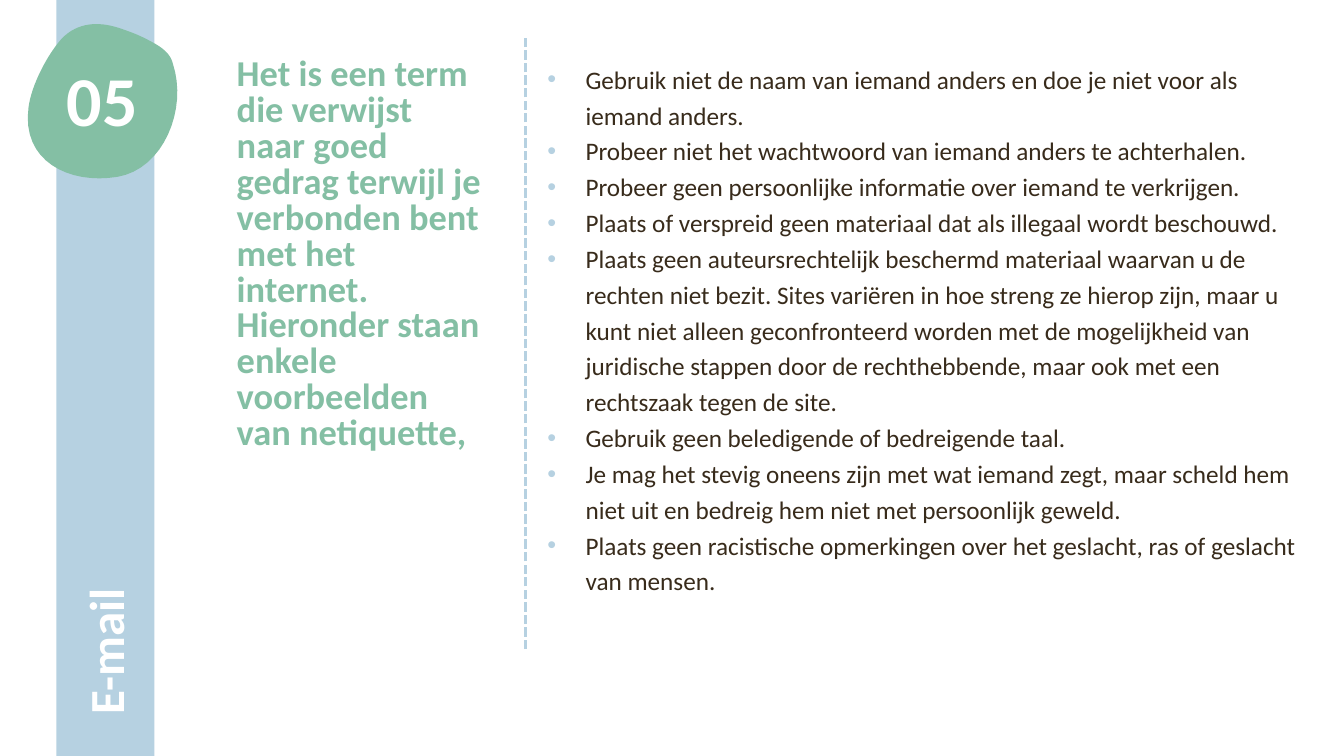
from lxml.etree import SubElement
from pptx import Presentation
from pptx.dml.color import RGBColor
from pptx.enum.shapes import MSO_CONNECTOR, MSO_SHAPE
from pptx.enum.text import MSO_ANCHOR, PP_ALIGN
from pptx.oxml.ns import qn
from pptx.util import Inches, Pt

WIDE, HIGH = 13.33, 7.5
HUES = {"blue": "B6D1E1", "green": "84BFA4", "white": "FFFFFF", "brown": "382B1B"}
INTRO = ("Het is een term die verwijst naar goed gedrag terwijl je verbonden bent met het "
         "internet. Hieronder staan enkele voorbeelden van netiquette,")
RULES = [
    "Gebruik niet de naam van iemand anders en doe je niet voor als iemand anders.",
    "Probeer niet het wachtwoord van iemand anders te achterhalen.",
    "Probeer geen persoonlijke informatie over iemand te verkrijgen.",
    "Plaats of verspreid geen materiaal dat als illegaal wordt beschouwd.",
    "Plaats geen auteursrechtelijk beschermd materiaal waarvan u de rechten niet bezit. "
    "Sites variëren in hoe streng ze hierop zijn, maar u kunt niet alleen geconfronteerd "
    "worden met de mogelijkheid van juridische stappen door de rechthebbende, maar ook met "
    "een rechtszaak tegen de site.",
    "Gebruik geen beledigende of bedreigende taal.",
    "Je mag het stevig oneens zijn met wat iemand zegt, maar scheld hem niet uit en bedreig "
    "hem niet met persoonlijk geweld.",
    "Plaats geen racistische opmerkingen over het geslacht, ras of geslacht van mensen.",
]
START = (61, 3)
CURVES = [
    ((48, -1), (34, -1), (23, 10)),
    ((13, 21), (3, 40), (1, 54)),
    ((-4, 89), (28, 104), (60, 99)),
    ((91, 94), (107, 55), (97, 26)),
    ((95, 18), (87, 14), (79, 10)),
    ((73, 7), (67, 5), START),
]


def part(box, left, top, wide, high):
    """Return a box given in percent of another box."""
    x, y, w, h = box
    return x + w * left / 100, y + h * top / 100, w * wide / 100, h * high / 100


def hue(name):
    """Return a named colour."""
    return RGBColor.from_string(HUES[name])


def paint(shape, name):
    """Give a shape a flat fill without line or shadow."""
    shape.shadow.inherit = False
    shape.fill.solid()
    shape.fill.fore_color.rgb = hue(name)
    shape.line.fill.background()


def write(slide, box, lines, size, color, bold=False, space=None, align=PP_ALIGN.LEFT,
          anchor=MSO_ANCHOR.TOP, turn=0, left=0, hang=0, dot=None):
    """Add a text box with one paragraph for each line."""
    shape = slide.shapes.add_textbox(*map(Inches, box))
    shape.rotation = turn
    frame = shape.text_frame
    frame.word_wrap = True
    frame.vertical_anchor = anchor
    for i, line in enumerate(lines):
        para = frame.add_paragraph() if i else frame.paragraphs[0]
        para.alignment = align
        para.line_spacing = space
        props = para._p.get_or_add_pPr()
        props.set("marL", str(Inches(left)))
        props.set("indent", str(Inches(hang)))
        if dot:
            tint = SubElement(props, qn("a:buClr"))
            SubElement(tint, qn("a:srgbClr"), val=HUES[dot])
            SubElement(props, qn("a:buFont"), typeface="Arial")
            SubElement(props, qn("a:buChar"), char="•")
        run = para.add_run()
        run.text = line
        run.font.name = "Calibri"
        run.font.size = Pt(size)
        run.font.bold = bold
        run.font.color.rgb = hue(color)


def blob(slide, box, steps=16):
    """Draw the rounded badge from its cubic curves."""
    spots, last = [], START
    for a, b, end in CURVES:
        for i in range(1, steps + 1):
            t = i / steps
            u = 1 - t
            spots.append(tuple(
                u ** 3 * p + 3 * u * u * t * q + 3 * u * t * t * r + t ** 3 * s
                for p, q, r, s in zip(last, a, b, end)))
        last = end
    ends = [tuple(map(Inches, part(box, x, y, 0, 0)[:2])) for x, y in spots]
    pen = slide.shapes.build_freeform(*ends[-1])
    pen.add_line_segments(ends[:-1], close=True)
    paint(pen.convert_to_shape(), "green")


def band(slide, box):
    """Place the side band with its badge, number and title."""
    bar = slide.shapes.add_shape(MSO_SHAPE.RECTANGLE, *map(Inches, box))
    paint(bar, "blue")
    blob(slide, part(box, -30, 3.07, 153.6, 20.53))
    write(slide, part(box, -382.5, 35.07, 866, 9.47), ["E-mail"], 35, "white", bold=True,
          space=Pt(40.2), anchor=MSO_ANCHOR.MIDDLE, turn=270)
    write(slide, part(box, -40.2, 8.13, 174.2, 12.53), ["05"], 50, "white", bold=True,
          space=0.9, align=PP_ALIGN.CENTER)


def intro(slide, box):
    """Place the green lead text."""
    write(slide, box, [INTRO], 26, "green", bold=True, space=Pt(25.6), left=0.02)


def rules(slide, box):
    """Place the bulleted rules with the dashed line on their left."""
    write(slide, part(box, 1.4, 2.8, 98.6, 90.63), RULES, 18, "brown", space=Pt(25.6),
          left=0.39, hang=-0.38, dot="blue")
    x, y, _, h = box
    rule = slide.shapes.add_connector(
        MSO_CONNECTOR.STRAIGHT, *map(Inches, (x, y + h, x, y)))
    rule.line.color.rgb = hue("blue")
    rule.line.width = Pt(2.25)
    SubElement(rule.line._get_or_add_ln(), qn("a:prstDash"), val="sysDash")
    SubElement(rule._element.spPr, qn("a:effectLst"))


def main():
    """Build and save the slide."""
    deck = Presentation()
    deck.slide_width, deck.slide_height = Inches(WIDE), Inches(HIGH)
    slide = deck.slides.add_slide(deck.slide_layouts[6])
    page = (0, 0, WIDE, HIGH)
    band(slide, part(page, 4.2, 0, 7.28, 100))
    intro(slide, part(page, 16.73, 7.07, 20.41, 45.2))
    rules(slide, part(page, 39.08, 4.8, 58.96, 81.07))
    deck.save("out.pptx")


if __name__ == "__main__":
    main()
